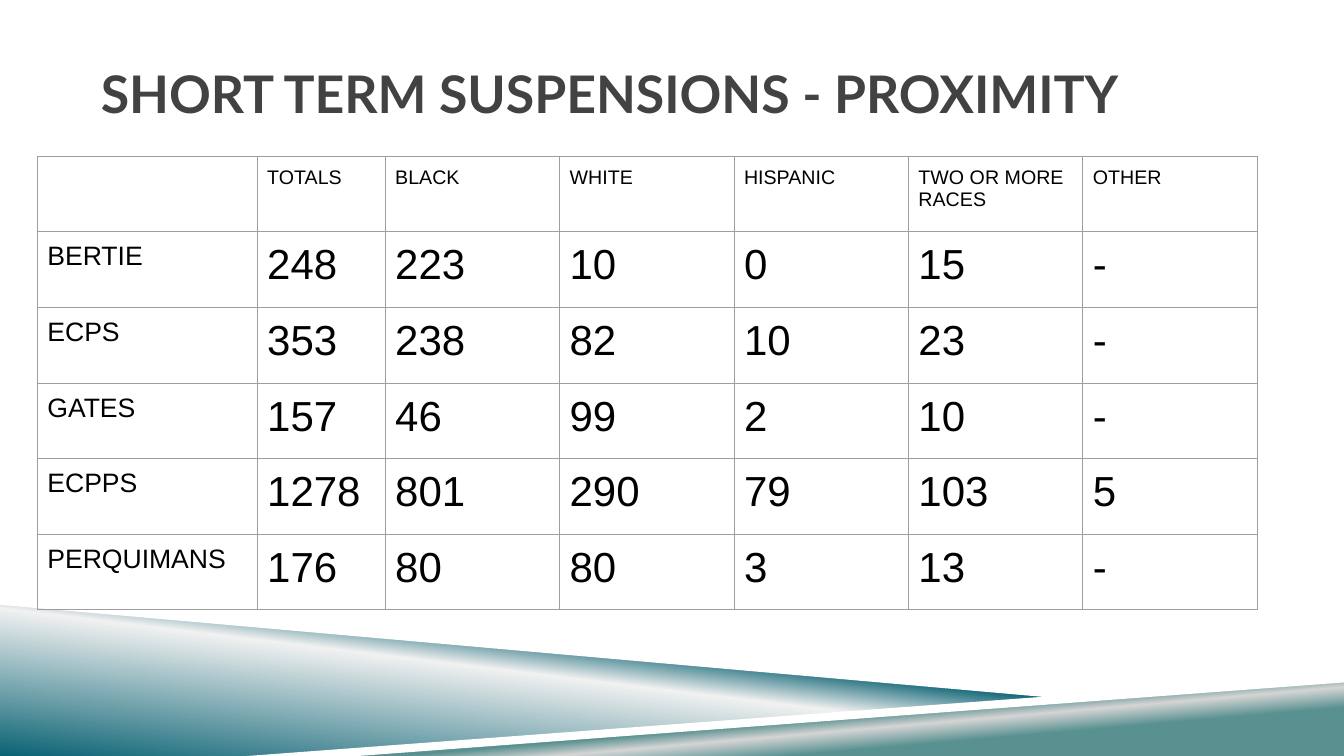
import lxml.etree
import pptx
import pptx.dml.color
import pptx.enum.text
import pptx.oxml
import pptx.oxml.ns
import pptx.util

WIDTH, HEIGHT = 13.33, 7.5
COLUMN_WIDTHS = [2.18, 1.27] + [1.73] * 5
ROW_HEIGHT = 0.75
SUSPENSIONS = [
    ["", "TOTALS", "BLACK", "WHITE", "HISPANIC", "TWO OR MORE RACES", "OTHER"],
    ["BERTIE", "248", "223", "10", "0", "15", "-"],
    ["ECPS", "353", "238", "82", "10", "23", "-"],
    ["GATES", "157", "46", "99", "2", "10", "-"],
    ["ECPPS", "1278", "801", "290", "79", "103", "5"],
    ["PERQUIMANS", "176", "80", "80", "3", "13", "-"],
]
TEAL, SEA_GREEN = "0B6374", "599191"


def inches(value):
    return pptx.util.Inches(value)


def color(value):
    return pptx.dml.color.RGBColor.from_string(value)


def add_span(para, text, font, size, shade, bold=False):
    span = para.add_run()
    span.text = text
    span.font.name = font
    span.font.size = pptx.util.Pt(size)
    span.font.bold = bold
    span.font.color.rgb = color(shade)


def add_band(page, points):
    corners = [(inches(x), inches(y)) for x, y in points]
    builder = page.shapes.build_freeform(*corners[0], scale=1.0)
    builder.add_line_segments(corners[1:], close=True)
    band = builder.convert_to_shape()
    band.shadow.inherit = False
    band.line.fill.background()
    return band


def fill_plain(band, shade):
    band.fill.solid()
    band.fill.fore_color.rgb = color(shade)


def fill_gradient(band, stops, clockwise_angle):
    band.fill.gradient()
    band.fill.gradient_angle = 360 - clockwise_angle
    stop_list = band._element.spPr.find(".//" + pptx.oxml.ns.qn("a:gsLst"))
    for stop in list(stop_list):
        stop_list.remove(stop)
    for percent, shade in stops:
        stop = lxml.etree.SubElement(
            stop_list, pptx.oxml.ns.qn("a:gs"), pos=str(percent * 1000))
        lxml.etree.SubElement(stop, pptx.oxml.ns.qn("a:srgbClr"), val=shade)


def add_title(page, text):
    box = page.shapes.add_textbox(
        inches(1), inches(0.3), inches(WIDTH - 2), inches(1.25))
    frame = box.text_frame
    frame.word_wrap = True
    frame.vertical_anchor = pptx.enum.text.MSO_ANCHOR.MIDDLE
    frame.margin_left = frame.margin_right = 0
    add_span(frame.paragraphs[0], text, "Lato", 37, "424242", bold=True)


def set_borders(cell, shade, points):
    properties = cell._tc.get_or_add_tcPr()
    for position, side in enumerate(("lnL", "lnR", "lnT", "lnB")):
        border = pptx.oxml.parse_xml(
            f'<a:{side} {pptx.oxml.ns.nsdecls("a")} w="{pptx.util.Pt(points)}">'
            f'<a:solidFill><a:srgbClr val="{shade}"/></a:solidFill></a:{side}>')
        properties.insert(position, border)


def text_size(row, column):
    if row == 0:
        return 14
    return 19 if column == 0 else 30


def add_suspension_table(page):
    frame = page.shapes.add_table(
        len(SUSPENSIONS), len(COLUMN_WIDTHS), inches(0.37), inches(1.55),
        inches(sum(COLUMN_WIDTHS)), inches(ROW_HEIGHT * len(SUSPENSIONS)))
    table = frame.table
    table.first_row = table.horz_banding = False
    for column, width in zip(table.columns, COLUMN_WIDTHS):
        column.width = inches(width)
    for row, values in enumerate(SUSPENSIONS):
        table.rows[row].height = inches(ROW_HEIGHT)
        for column, value in enumerate(values):
            cell = table.cell(row, column)
            cell.fill.background()
            cell.margin_left = cell.margin_right = inches(0.1)
            cell.margin_top = cell.margin_bottom = inches(0.1)
            set_borders(cell, "9E9E9E", 0.75)
            if value:
                add_span(cell.text_frame.paragraphs[0], value, "Arial",
                         text_size(row, column), "000000")


def main():
    deck = pptx.Presentation()
    deck.slide_width, deck.slide_height = inches(WIDTH), inches(HEIGHT)
    page = deck.slides.add_slide(deck.slide_layouts[6])

    # Coloured wedges along the bottom
    left_wedge = add_band(
        page, [(0, 5.97), (10.56, 6.92), (2.67, HEIGHT), (0, HEIGHT)])
    fill_gradient(
        left_wedge, [(0, TEAL), (52, "F1F1F1"), (66, TEAL), (100, TEAL)], 277)
    right_wedge = add_band(
        page, [(2.64, HEIGHT), (WIDTH, 6.72), (WIDTH, HEIGHT)])
    fill_gradient(
        right_wedge, [(0, SEA_GREEN), (28, SEA_GREEN), (40, "D5D5D5"),
                      (48, SEA_GREEN), (100, SEA_GREEN)], 265)

    # White strips along the wedge edges
    for points in (
        [(0, 5.92), (0, 6), (10.53, 6.93), (11.08, 6.9)],
        [(WIDTH, 6.69), (2.45, HEIGHT), (3.55, HEIGHT), (WIDTH, 6.77)],
    ):
        fill_plain(add_band(page, points), "FFFFFF")

    # Title and figures
    add_title(page, "SHORT TERM SUSPENSIONS - PROXIMITY")
    add_suspension_table(page)

    deck.save("out.pptx")


if __name__ == "__main__":
    main()
